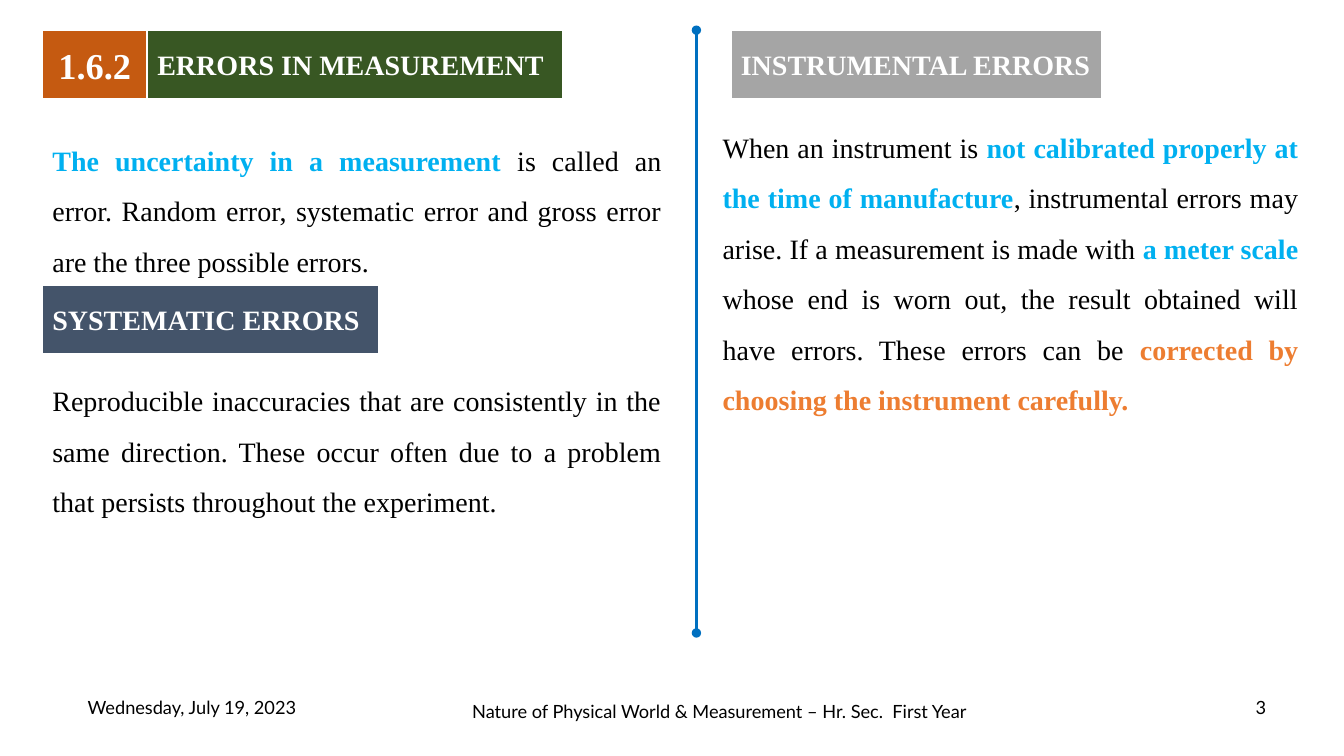
from dataclasses import dataclass

from lxml import etree
from pptx import Presentation
from pptx import util as u
from pptx.dml.color import RGBColor
from pptx.enum import shapes, text
from pptx.oxml import ns

HUES = {
    "black": "000000", "white": "FFFFFF", "sky": "00B0F0", "blue": "0070C0",
    "orange": "ED7D31", "rust": "C55A11", "green": "385723",
    "slate": "44546A", "grey": "A5A5A5",
}
SERIF, SANS = "Times New Roman", "Lato"
LEFT, TOP, BAR = 1.07, 0.76, 1.73  # left edge, top edge, heading height
ALIGN = text.PP_ALIGN


@dataclass
class Run:
    words: str
    hue: str = "black"
    bold: bool = False


@dataclass
class Box:
    x: float
    y: float
    w: float
    h: float
    runs: list[Run]
    size: float = 20
    font: str = SERIF
    align: ALIGN = ALIGN.LEFT
    fill: str = ""
    space: float = 1.0
    wrap: bool = True

    def place(self) -> list[u.Length]:
        return [u.Cm(v) for v in (self.x, self.y, self.w, self.h)]


def head(x: float, y: float, w: float, words: str, fill: str, **style) -> Box:
    return Box(x, y, w, BAR, [Run(words, "white", True)], fill=fill, **style)


def body(x: float, y: float, w: float, h: float, *runs: Run) -> Box:
    return Box(x, y, w, h, list(runs), align=ALIGN.JUSTIFY, space=1.5)


def foot(x: float, y: float, w: float, words: str) -> Box:
    return Box(x, y, w, 1.02, [Run(words)], 13, SANS, ALIGN.CENTER, wrap=False)


def put(item, values: dict) -> None:
    for name, value in values.items():
        setattr(item, name, value)


def hue(name: str) -> RGBColor:
    return RGBColor.from_string(HUES[name])


def write(shape, box: Box) -> None:
    frame = shape.text_frame
    anchor = text.MSO_ANCHOR.TOP if box.space > 1 else text.MSO_ANCHOR.MIDDLE
    put(frame, {"word_wrap": box.wrap, "auto_size": text.MSO_AUTO_SIZE.NONE,
                "vertical_anchor": anchor})
    para = frame.paragraphs[0]
    put(para, {"alignment": box.align, "line_spacing": box.space})
    for part in box.runs:
        run = para.add_run()
        run.text = part.words
        put(run.font, {"name": box.font, "size": u.Pt(box.size), "bold": part.bold})
        run.font.color.rgb = hue(part.hue)


def paint(shape, box: Box) -> None:
    shape.fill.solid()
    shape.fill.fore_color.rgb = hue(box.fill)
    shape.line.color.rgb = hue("white")
    shape.line.width = u.Pt(1.5)


def draw(slide, box: Box) -> None:
    if box.fill:
        shape = slide.shapes.add_shape(shapes.MSO_SHAPE.RECTANGLE, *box.place())
        shape.shadow.inherit = False
        paint(shape, box)
    else:
        shape = slide.shapes.add_textbox(*box.place())
    write(shape, box)


def title(slide, box: Box) -> None:
    shape = slide.shapes.title
    put(shape, dict(zip(("left", "top", "width", "height"), box.place())))
    paint(shape, box)
    write(shape, box)


def divide(slide, x: float, top: float, base: float) -> None:
    rule = slide.shapes.add_connector(
        shapes.MSO_CONNECTOR.STRAIGHT, u.Cm(x), u.Cm(top), u.Cm(x), u.Cm(base))
    rule.line.color.rgb = hue("blue")
    rule.line.width = u.Pt(2.25)
    line = rule.line._get_or_add_ln()
    for end in ("a:headEnd", "a:tailEnd"):
        etree.SubElement(line, ns.qn(end), type="oval")
    etree.SubElement(rule._element.spPr, ns.qn("a:effectLst"))


TITLE = head(3.71, TOP, 10.49, "ERRORS IN MEASUREMENT", "green")
BOXES = [
    # Footer
    foot(1.8, 17.3, 6.07, "Wednesday, July 19, 2023"),
    foot(31.24, 17.3, 1.07, "3"),
    foot(11.56, 17.4, 13.13,
         "Nature of Physical World & Measurement – Hr. Sec.  First Year"),
    # Left column
    head(LEFT, TOP, 2.64, "1.6.2", "rust", size=26, align=ALIGN.CENTER),
    body(LEFT, 3.07, 15.85, 4.11,
         Run("The uncertainty in a measurement ", "sky", True),
         Run("is called an error. Random error, systematic error and gross error "
             "are the three possible errors.")),
    head(LEFT, 7.19, 8.48, "SYSTEMATIC ERRORS", "slate"),
    body(LEFT, 9.12, 15.85, 3.94,
         Run("Reproducible inaccuracies that are consistently in the same direction. "
             "These occur often due to a problem that persists throughout the "
             "experiment.")),
    # Right column
    head(18.42, TOP, 9.35, "INSTRUMENTAL ERRORS", "grey"),
    body(17.96, 2.74, 15.01, 9.25,
         Run("When an instrument is"),
         Run(" not calibrated properly at the time of manufacture", "sky", True),
         Run(", instrumental errors may arise. If a measurement is made with "),
         Run("a meter scale ", "sky", True),
         Run("whose end is worn out, the result obtained will have errors. "
             "These errors can be "),
         Run("corrected by choosing the instrument carefully.", "orange", True)),
]


def main() -> None:
    deck = Presentation()
    put(deck, {"slide_width": u.Cm(33.87), "slide_height": u.Cm(19.05)})
    slide = deck.slides.add_slide(deck.slide_layouts.get_by_name("Title Only"))
    title(slide, TITLE)
    divide(slide, 17.55, TOP, 15.95)
    for box in BOXES:
        draw(slide, box)
    deck.save("out.pptx")


if __name__ == "__main__":
    main()
